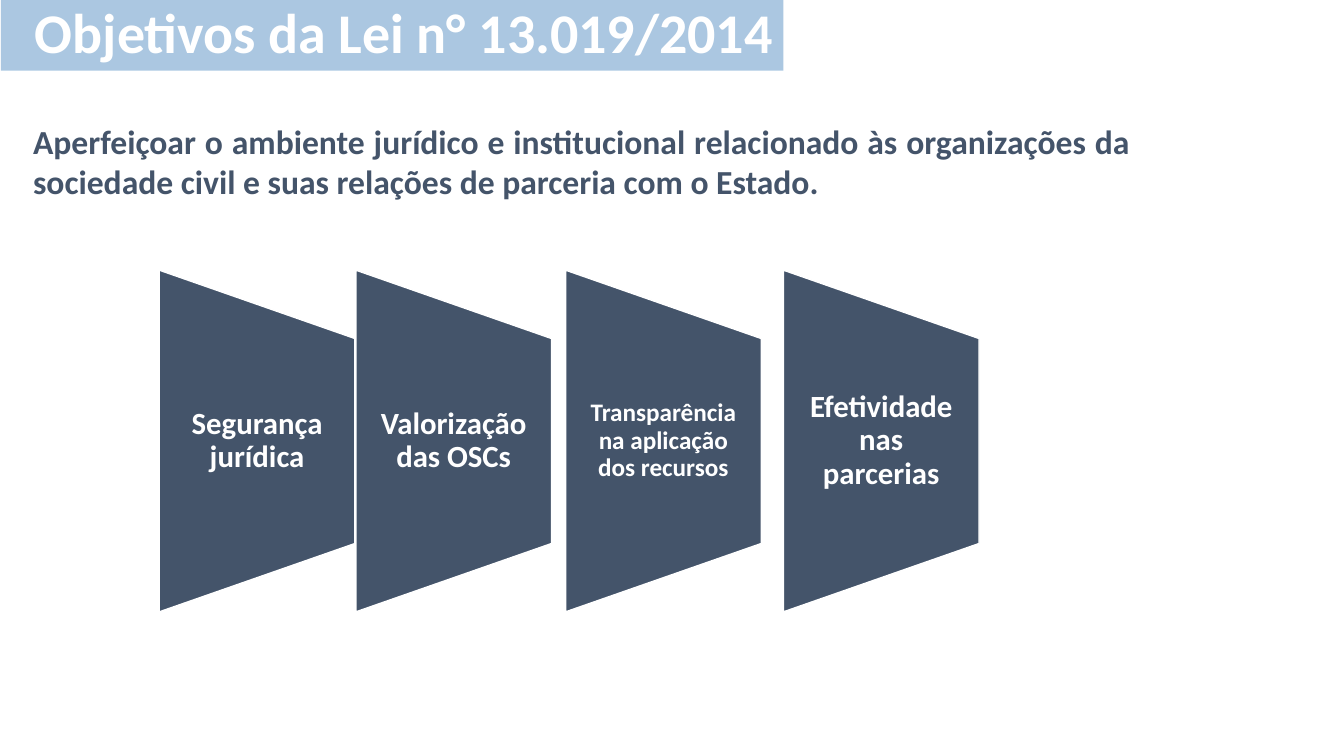
from lxml import etree
from pptx import Presentation
from pptx import util as u
from pptx.dml.color import RGBColor
from pptx.enum import shapes, text
from pptx.oxml.ns import qn

WIDTH, HEIGHT = 13.33, 7.5
NAVY, BLUE, WHITE = "44546A", "2E75B6", "FFFFFF"
# Label, left edge, font size, side inset
PANELS = [
    ("Segurança jurídica", 1.58, 22, 0.15),
    ("Valorização das OSCs", 3.53, 22, 0.15),
    ("Transparência na aplicação dos recursos", 5.61, 18, 0.12),
    ("Efetividade nas parcerias", 7.77, 22, 0.15),
]


def color(hex_string):
    return RGBColor.from_string(hex_string)


def fill_solid(shape, hex_string, opacity=100):
    shape.fill.solid()
    shape.fill.fore_color.rgb = color(hex_string)
    if opacity < 100:
        color_element = shape.fill._xPr.find(qn("a:solidFill"))[0]
        etree.SubElement(color_element, qn("a:alpha"), val=str(opacity * 1000))


def write(shape, words, size, hex_string, align, line_spacing=1.0,
          anchor=text.MSO_ANCHOR.MIDDLE):
    frame = shape.text_frame
    frame.text = words
    frame.word_wrap = True
    frame.auto_size = text.MSO_AUTO_SIZE.NONE
    frame.vertical_anchor = anchor
    paragraph = frame.paragraphs[0]
    paragraph.alignment = align
    paragraph.line_spacing = line_spacing
    font = paragraph.runs[0].font
    font.name, font.size, font.bold = "Calibri", u.Pt(size), True
    font.color.rgb = color(hex_string)


def add_title(slide, left, top, width, height):
    title = slide.shapes.title
    title.left, title.top = u.Inches(left), u.Inches(top)
    title.width, title.height = u.Inches(width), u.Inches(height)
    fill_solid(title, BLUE, opacity=40)
    write(title, "Objetivos da Lei n° 13.019/2014", 40, WHITE,
          text.PP_ALIGN.RIGHT, 0.9)


def add_purpose(slide, left, top, width, height):
    box = slide.shapes.add_textbox(*map(u.Inches, (left, top, width, height)))
    fill_solid(box, WHITE)
    write(box, "Aperfeiçoar o ambiente jurídico e institucional relacionado às "
          "organizações da sociedade civil e suas relações de parceria com o Estado.",
          24, NAVY, text.PP_ALIGN.JUSTIFY, anchor=text.MSO_ANCHOR.TOP)


def add_panel(slide, left, top, width, height, label, size, inset):
    """Place a trapezoid turned on its side, with an upright label over it."""
    shift = (height - width) / 2
    panel = slide.shapes.add_shape(
        shapes.MSO_SHAPE.FLOWCHART_MANUAL_OPERATION,
        *map(u.Inches, (left - shift, top + shift, height, width)))
    panel.rotation = 270
    panel.shadow.inherit = False
    fill_solid(panel, NAVY)
    panel.line.color.rgb = color(WHITE)
    panel.line.width = u.Pt(1)

    label_box = slide.shapes.add_textbox(
        *map(u.Inches, (left, top + height / 5, width, height * 3 / 5)))
    frame = label_box.text_frame
    frame.margin_left = frame.margin_right = u.Inches(inset)
    frame.margin_top = frame.margin_bottom = 0
    write(label_box, label, size, WHITE, text.PP_ALIGN.CENTER, 0.9)


def main():
    presentation = Presentation()
    presentation.slide_width = u.Inches(WIDTH)
    presentation.slide_height = u.Inches(HEIGHT)
    slide = presentation.slides.add_slide(presentation.slide_layouts[5])
    add_title(slide, 0.01, 0, 7.76, 0.7)
    add_purpose(slide, 0.23, 1.15, 11.08, 0.91)
    for label, left, size, inset in PANELS:
        add_panel(slide, left, 2.68, 1.94, 3.39, label, size, inset)
    presentation.save("out.pptx")


if __name__ == "__main__":
    main()
